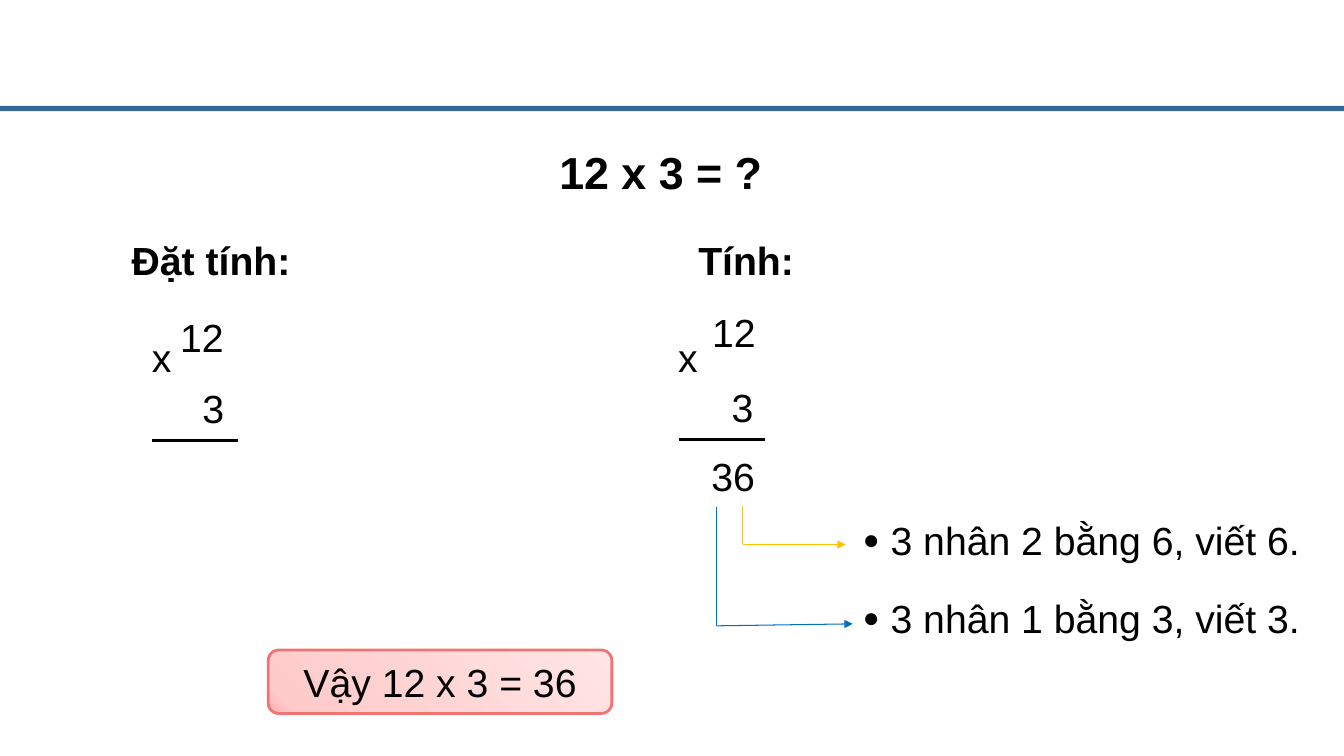
from copy import deepcopy

from lxml import etree
from pptx import Presentation
from pptx.dml.color import RGBColor
from pptx.enum import shapes, text
from pptx.oxml.ns import qn
from pptx.util import Cm, Pt

BLACK = RGBColor(0x00, 0x00, 0x00)
BAR_BLUE = RGBColor(0x36, 0x68, 0x96)
GOLD = RGBColor(0xFF, 0xC0, 0x00)
PALE_GOLD = RGBColor(0xFE, 0xBC, 0x4D)
BLUE = RGBColor(0x00, 0x70, 0xC0)
CORAL = RGBColor(0xF1, 0x74, 0x75)
PINKS = [(0, RGBColor(0xFF, 0xAB, 0xAB)),
         (0.07, RGBColor(0xFF, 0xCA, 0xCA)),
         (1, RGBColor(0xFF, 0xE5, 0xE5))]


def place(sp, left, top, width, height):
    sp.left, sp.top, sp.width, sp.height = Cm(left), Cm(top), Cm(width), Cm(height)


def write(p, words, size=28, bold=False, align=text.PP_ALIGN.LEFT):
    p.alignment = align
    r = p.add_run()
    r.text = words
    r.font.name = "Arial"
    r.font.size = Pt(size)
    r.font.bold = bold
    r.font.color.rgb = BLACK


def add_label(slide, words, left, top, width, **fmt):
    sp = slide.shapes.add_textbox(Cm(left), Cm(top), Cm(width), Cm(1.45))
    sp.text_frame.word_wrap = True
    write(sp.text_frame.paragraphs[0], words, **fmt)


def add_line(slide, start, end, color, width=0.75, arrow=False):
    ends = [Cm(v) for v in (*start, *end)]
    line = slide.shapes.add_connector(shapes.MSO_CONNECTOR.STRAIGHT, *ends)
    line.line.color.rgb = color
    line.line.width = Pt(width)
    if arrow:
        etree.SubElement(line.line._get_or_add_ln(), qn("a:tailEnd"), type="triangle")
    etree.SubElement(line._element.spPr, qn("a:effectLst"))


def add_elbow_arrow(slide, start, corner, end, stem_color, arrow_color):
    add_line(slide, corner, end, arrow_color, arrow=True)
    add_line(slide, start, corner, stem_color)


def add_multiplication(slide, left, top_factor, bottom_factor, rule_left, rule_top):
    """Set out 12 x 3 in a column; each factor is given as its box position."""
    add_label(slide, "12", *top_factor, 2.18)
    add_label(slide, "x", left, 8.28, 0.98)
    add_label(slide, "3", *bottom_factor, 1.85)
    add_line(slide, (rule_left, rule_top), (rule_left + 2.17, rule_top), BLACK, 2.25)


def add_shape(slide, kind, *box):
    sp = slide.shapes.add_shape(kind, *[Cm(v) for v in box])
    sp.shadow.inherit = False
    return sp


def add_bar(slide):
    sp = add_shape(slide, shapes.MSO_SHAPE.RECTANGLE, 0, 2.67, 33.87, 0.13)
    sp.fill.solid()
    sp.fill.fore_color.rgb = BAR_BLUE
    sp.line.fill.background()


def add_answer(slide, words):
    sp = add_shape(slide, shapes.MSO_SHAPE.ROUNDED_RECTANGLE, 6.76, 16.38, 8.66, 1.6)
    sp.fill.gradient()
    sp.fill.gradient_angle = 45
    stops = sp._element.spPr.find(".//" + qn("a:gsLst"))
    stops.append(deepcopy(stops[-1]))
    for stop, (position, color) in zip(sp.fill.gradient_stops, PINKS):
        stop.position = position
        stop.color.rgb = color
    sp.line.color.rgb = CORAL
    sp.line.width = Pt(2)
    sp.text_frame.vertical_anchor = text.MSO_ANCHOR.MIDDLE
    write(sp.text_frame.paragraphs[0], words, align=text.PP_ALIGN.CENTER)


def set_title(slide, words):
    sp = slide.shapes.title
    place(sp, 13.84, 3.51, 7.16, 1.63)
    tf = sp.text_frame
    tf.auto_size = text.MSO_AUTO_SIZE.NONE
    tf.vertical_anchor = text.MSO_ANCHOR.TOP
    write(tf.paragraphs[0], words, size=32, bold=True)


def set_steps(slide, steps):
    sp = slide.placeholders[1]
    place(sp, 21.49, 12.88, 12.2, 3.4)
    tf = sp.text_frame
    tf.auto_size = text.MSO_AUTO_SIZE.NONE
    for i, step in enumerate(steps):
        p = tf.add_paragraph() if i else tf.paragraphs[0]
        pPr = p._p.get_or_add_pPr()
        pPr.set("marL", str(Cm(0.7)))
        pPr.set("indent", str(-Cm(0.7)))
        etree.SubElement(pPr, qn("a:buSzPct"), val="71000")
        etree.SubElement(pPr, qn("a:buFont"), typeface="Arial")
        etree.SubElement(pPr, qn("a:buChar"), char="●")
        p.space_before = Pt(22 if i else 0)
        write(p, step)


def main():
    prs = Presentation()
    prs.slide_width, prs.slide_height = Cm(33.87), Cm(19.05)
    slide = prs.slides.add_slide(prs.slide_layouts[1])

    add_bar(slide)
    set_title(slide, "12 x 3 = ?")

    add_label(slide, "Đặt tính:", 3.07, 5.82, 5.59, bold=True)
    add_multiplication(slide, 3.58, (4.29, 7.77), (4.85, 9.55), 3.84, 11.1)

    add_label(slide, "Tính:", 17.35, 5.82, 4.27, bold=True)
    add_multiplication(slide, 16.84, (17.7, 7.65), (18.19, 9.53), 17.12, 11.07)
    add_label(slide, "36", 17.68, 11.28, 1.85)

    add_elbow_arrow(slide, (18.72, 12.75), (18.72, 13.72), (21.31, 13.72), PALE_GOLD, GOLD)
    add_elbow_arrow(slide, (18.06, 12.78), (18.06, 15.77), (21.49, 15.72), BLUE, BLUE)
    set_steps(slide, ["3 nhân 2 bằng 6, viết 6.", "3 nhân 1 bằng 3, viết 3."])

    add_answer(slide, "Vậy 12 x 3 = 36")
    prs.save("out.pptx")


if __name__ == "__main__":
    main()
